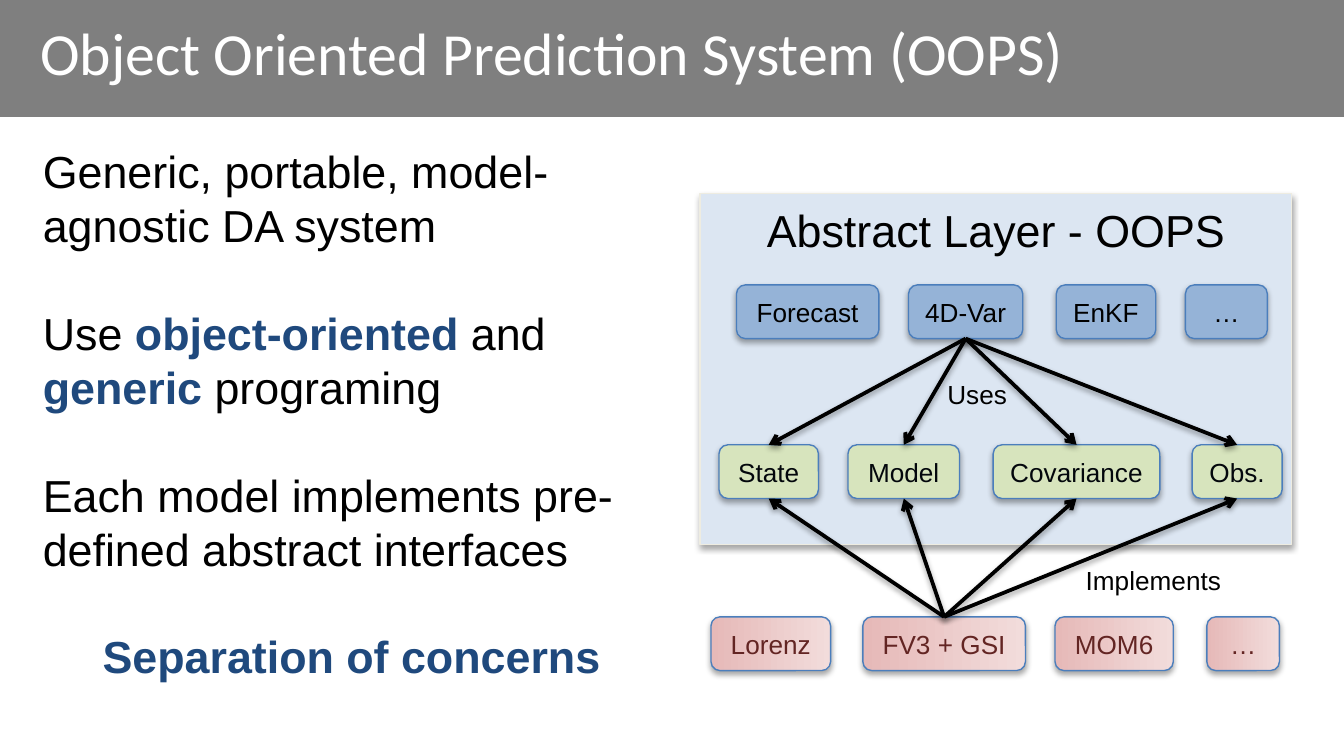
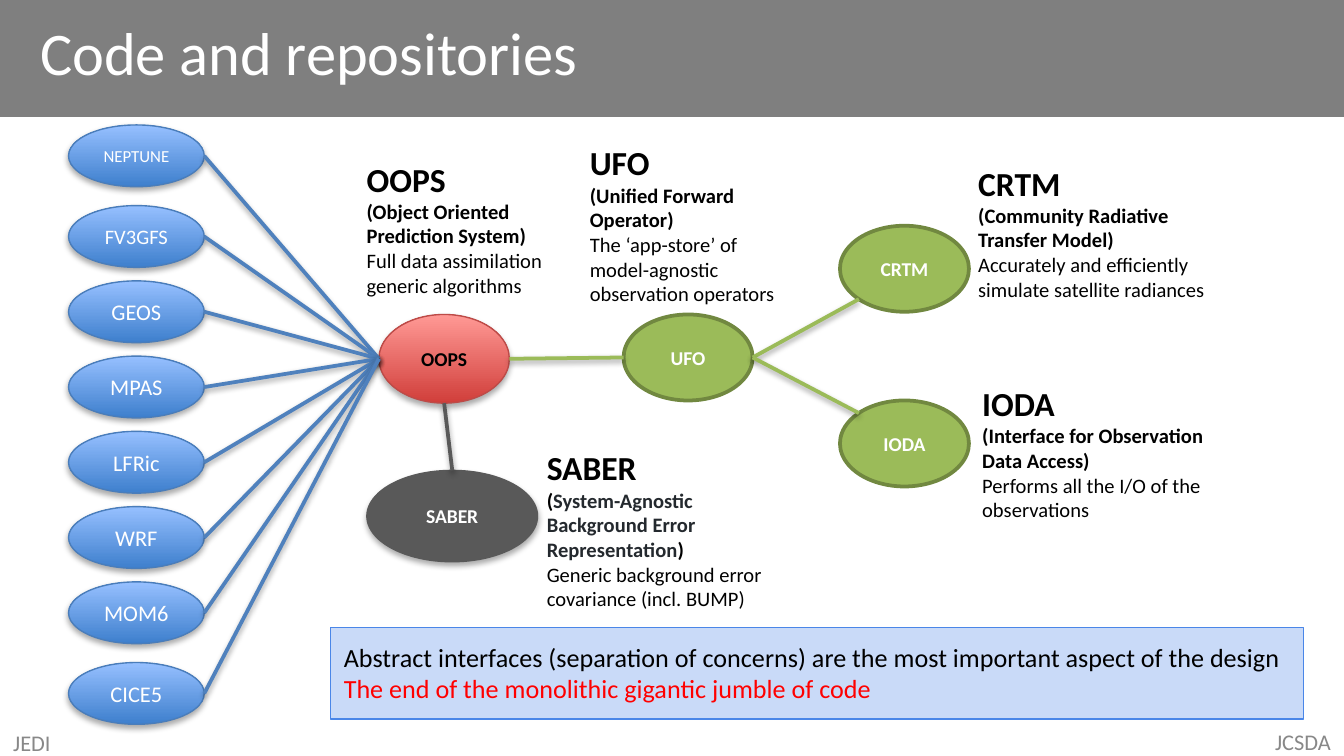
import copy
import math

import lxml.etree
import pptx
import pptx.dml.color
import pptx.enum.shapes
import pptx.enum.text
import pptx.oxml.ns
import pptx.util

COLUMNS, ROWS = 100, 56.25
COLOURS = {
    "black": "000000", "white": "FFFFFF", "ink": "03070C", "navy": "1F497D",
    "slate": "24292E", "red": "FF0000", "footer": "888888", "panel": "DCE6F2",
    "panel edge": "EEECE1", "pill edge": "4B7EBC", "application": "95B3D7",
    "interface": "D7E4BD", "rose": "E6B9B8", "pale rose": "F2DCDB",
    "maroon": "632523", "blue": "3E7FCD", "pale blue": "96C0FF",
    "blue edge": "4A7DBA", "blue line": "4F81BD", "core": "D13F3B",
    "pale core": "FF9995", "core edge": "BD4B48", "green": "9BBB59",
    "green edge": "718840", "grey": "595959", "banner": "C9DAF8",
    "banner edge": "4A86E8",
}
SHAPES = pptx.enum.shapes.MSO_SHAPE
ALIGN = pptx.enum.text.PP_ALIGN
ANCHOR = pptx.enum.text.MSO_ANCHOR
SITES = {270: 0, 180: 1, 90: 2, 0: 3}
qn = pptx.oxml.ns.qn


def rgb(name):
    return pptx.dml.color.RGBColor.from_string(COLOURS[name])


class Slides:
    """Holds the deck's style and the page being drawn."""

    def __init__(self):
        self.deck = pptx.Presentation()
        self.deck.slide_width = pptx.util.Inches(10)
        self.deck.slide_height = pptx.util.Inches(5.625)
        self.page = None
        self.font = "Calibri"

    def place(self, box):
        """Turn left, top, width, height in grid units into lengths."""
        units = (self.deck.slide_width / COLUMNS, self.deck.slide_height / ROWS) * 2
        return [round(length * unit) for length, unit in zip(box, units)]

    def start(self, title, box, size, font):
        self.page = self.deck.slides.add_slide(self.deck.slide_layouts[6])
        self.font = font
        band = self.shape(SHAPES.RECTANGLE, (0, 0, COLUMNS, 8.7), "black")
        colour = band._element.spPr.find(qn("a:solidFill"))[0]
        lxml.etree.SubElement(colour, qn("a:alpha"), val="50000")
        self.text(box, [[(title, {"size": size, "colour": "white", "name": "Calibri"})]],
                  anchor=ANCHOR.MIDDLE)

    def fill_frame(self, frame, paragraphs, align=ALIGN.LEFT, **layout):
        """Fill a frame; each paragraph is a list of (text, format) spans."""
        for index, spans in enumerate(paragraphs):
            para = frame.paragraphs[0] if index == 0 else frame.add_paragraph()
            para.alignment = align
            for name, value in layout.items():
                if index or name != "space_before":
                    setattr(para, name, value)
            for text, look in spans:
                self.span(para, text, look)

    def span(self, para, text, look):
        values = {"name": self.font, "bold": False, "colour": "black", **look}
        values["size"] = pptx.util.Pt(values["size"])
        colour = values.pop("colour")
        for index, piece in enumerate(text.split("\n")):
            if index:
                para.add_line_break()
                para._p[-1].append(copy.deepcopy(run._r.rPr))
            run = para.add_run()
            run.text = piece
            for name, value in values.items():
                setattr(run.font, name, value)
            run.font.color.rgb = rgb(colour)

    def text(self, box, paragraphs, anchor=ANCHOR.TOP, **layout):
        frame = self.page.shapes.add_textbox(*self.place(box)).text_frame
        frame.word_wrap = True
        frame.vertical_anchor = anchor
        self.fill_frame(frame, paragraphs, **layout)

    def shadow(self, effects, alpha, distance):
        cast = lxml.etree.SubElement(
            effects, qn("a:outerShdw"), blurRad="40000", dist=str(distance),
            dir="5400000", rotWithShape="0")
        colour = lxml.etree.SubElement(cast, qn("a:srgbClr"), val=COLOURS["black"])
        lxml.etree.SubElement(colour, qn("a:alpha"), val=str(alpha * 1000))

    def shape(self, kind, box, fill, edge=None, width=0.75, shadow=None, angle=0):
        """A fill is a colour, or a pair of colours for a gradient."""
        shape = self.page.shapes.add_shape(kind, *self.place(box))
        if isinstance(fill, tuple):
            shape.fill.gradient()
            shape.fill.gradient_angle = angle
            for stop, colour in zip(shape.fill.gradient_stops, fill):
                stop.color.rgb = rgb(colour)
        else:
            shape.fill.solid()
            shape.fill.fore_color.rgb = rgb(fill)
        if edge:
            shape.line.color.rgb = rgb(edge)
            shape.line.width = pptx.util.Pt(width)
        else:
            shape.line.fill.background()
        shape.shadow.inherit = False
        if shadow:
            self.shadow(shape._element.spPr.find(qn("a:effectLst")), shadow, 23000)
        return shape

    def node(self, kind, box, label, look, **style):
        """A shape with one centred label."""
        shape = self.shape(kind, box, **style)
        shape.text_frame.word_wrap = False
        shape.text_frame.vertical_anchor = ANCHOR.MIDDLE
        self.fill_frame(shape.text_frame, [[(label, look)]], align=ALIGN.CENTER)
        return shape

    def rim(self, shape, degrees):
        """Point on a shape's rim, clockwise from its right side."""
        turn = math.radians(degrees)
        return (round(shape.left + shape.width / 2 * (1 + math.cos(turn))),
                round(shape.top + shape.height / 2 * (1 + math.sin(turn))))

    def link(self, source, leave, target, arrive, colour, arrow=False, shadow=36):
        line = self.page.shapes.add_connector(
            pptx.enum.shapes.MSO_CONNECTOR.STRAIGHT,
            *self.rim(source, leave), *self.rim(target, arrive))
        if source.auto_shape_type != SHAPES.OVAL:
            line.begin_connect(source, SITES[leave])
            line.end_connect(target, SITES[arrive])
        line.line.color.rgb = rgb(colour)
        line.line.width = pptx.util.Pt(2)
        outline = line._element.spPr
        if arrow:
            lxml.etree.SubElement(outline.find(qn("a:ln")), qn("a:tailEnd"), type="arrow")
        self.shadow(lxml.etree.SubElement(outline, qn("a:effectLst")), shadow, 20000)


def draw_system(slides):
    slides.start("Object Oriented Prediction System (OOPS)", (2, 0, 91.5, 7.7), 32, "Arial")
    plain = {"size": 24}
    strong = {"size": 24, "bold": True, "colour": "navy"}
    pitch = pptx.util.Pt(28.9)
    slides.text((2.2, 10.2, 47.9, 32), [
        [("Generic, portable, model-agnostic DA system", plain)],
        [("Use ", plain), ("object-oriented", strong), (" and ", plain),
         ("generic ", strong), ("programing", plain)],
        [("Each model implements pre-defined abstract interfaces", plain)],
    ], line_spacing=pitch, space_before=pitch)
    slides.text((2.2, 46.3, 47.9, 5), [[("Separation of concerns", strong)]],
                align=ALIGN.CENTER, line_spacing=pitch)

    slides.shape(SHAPES.RECTANGLE, (52.1, 14.4, 44, 26.1), "panel", "panel edge", shadow=35)
    layers = [
        (21.2, "application", "black",
         [("Forecast", 54.8, 10.6), ("4D-Var", 67.6, 8.5), ("EnKF", 78.6, 7.4),
          ("…", 88.2, 6.1)]),
        (33.1, "interface", "ink",
         [("State", 53.5, 7.4), ("Model", 63.1, 8.3), ("Covariance", 73.9, 12.4),
          ("Obs.", 88.7, 6.7)]),
        (45.9, ("rose", "pale rose"), "maroon",
         [("Lorenz", 52.9, 8.9), ("FV3 + GSI", 64.2, 12.1), ("MOM6", 78.5, 8.8),
          ("…", 89.8, 5.4)]),
    ]
    applications, interfaces, models = [
        [slides.node(SHAPES.ROUNDED_RECTANGLE, (left, top, width, 4), label,
                     {"size": 14, "colour": ink}, fill=fill, edge="pill edge", shadow=35)
         for label, left, width in pills]
        for top, fill, ink, pills in layers]
    for source, leave, arrive in ((applications[1], 90, 270), (models[1], 270, 90)):
        for target in interfaces:
            slides.link(source, leave, target, arrive, "black", arrow=True, shadow=38)
    for label, box in (("Uses", (69.5, 27.7, 6.9, 4)), ("Implements", (79.8, 41.5, 14.3, 4))):
        slides.text(box, [[(label, {"size": 14})]])
    slides.text((51.9, 14.6, 44.4, 5), [[("Abstract Layer - OOPS", plain)]],
                align=ALIGN.CENTER, line_spacing=pitch)


def draw_repositories(slides):
    slides.start("Code and repositories", (2, 0.5, 92.4, 6.7), 32.4, "Calibri")
    for label, box, align in (("JEDI", (0, 54.2, 23.3, 2.1), ALIGN.LEFT),
                              ("JCSDA", (68.3, 54.2, 31.7, 2), ALIGN.RIGHT)):
        slides.text(box, [[(label, {"size": 12, "colour": "footer"})]],
                    anchor=ANCHOR.MIDDLE, align=align)

    def repository(label, box, ink="white", **style):
        look = {"size": 10.5, "bold": True, "colour": ink}
        return slides.node(SHAPES.OVAL, box, label, look, **style)

    oops = repository("OOPS", (28.2, 23.4, 9.7, 6.6), "black", fill=("core", "pale core"),
                      angle=90, edge="core edge", shadow=33)
    ufo, ioda, crtm = [
        repository(label, (left, top, 9.6, 6.4), fill="green", edge="green edge", width=2)
        for label, left, top in (("UFO", 46.4, 23.4), ("IODA", 62.5, 29.8),
                                 ("CRTM", 62.5, 16.8))]
    saber = repository("SABER", (27.3, 35, 12.7, 6.8), fill="grey", edge="grey", shadow=33)

    models = ["NEPTUNE", "FV3GFS", "GEOS", "MPAS", "LFRic", "WRF", "MOM6", "CICE5"]
    tops = [9.3] + [15.3 + 5.6 * step for step in range(6)] + [49.3]
    sizes = {"NEPTUNE": 9, "FV3GFS": 11}
    for label, top in zip(models, tops):
        model = slides.node(
            SHAPES.OVAL, (5.1, top, 10.1, 4.6), label,
            {"size": sizes.get(label, 12), "colour": "white"},
            fill=("blue", "pale blue"), angle=90, edge="blue edge", shadow=33)
        slides.link(model, 0, oops, 180, "blue line")
    slides.link(oops, 0, ufo, 180, "green")
    slides.link(ufo, 0, crtm, 135, "green")
    slides.link(ufo, 0, ioda, 225, "green")
    slides.link(oops, 90, saber, 270, "grey")

    captions = [
        ("UFO", "Unified Forward Operator",
         "The ‘app-store’ of model-agnostic \nobservation operators",
         (42.9, 10.1, 15.8, 12.6), "black"),
        ("IODA", "Interface for Observation Data Access",
         "Performs all the I/O of the observations", (72.1, 28, 21, 10.8), "black"),
        ("OOPS", "Object Oriented Prediction System",
         "Full data assimilation generic algorithms", (26.3, 11.3, 16.3, 12.5), "black"),
        ("CRTM", "Community Radiative Transfer Model",
         "Accurately and efficiently simulate satellite radiances",
         (71.8, 11.6, 19.7, 10.8), "black"),
        ("SABER", "System-Agnostic Background Error Representation",
         "Generic background error covariance (incl. BUMP)",
         (39.7, 32.8, 19.7, 13.4), "slate"),
    ]
    bold = {"size": 11, "bold": True}
    for short, name, purpose, box, ink in captions:
        slides.text(box, [
            [(short + "\n", {"size": 18, "bold": True}), ("(", bold),
             (name, {**bold, "colour": ink}), (")", bold)],
            [(purpose, {"size": 11})]])

    banner = slides.shape(SHAPES.RECTANGLE, (24.6, 46.7, 72.4, 6.8), "banner", "banner edge")
    frame = banner.text_frame
    for name, value in {"margin_top": pptx.util.Inches(0.1),
                        "margin_bottom": pptx.util.Inches(0.1),
                        "word_wrap": True, "vertical_anchor": ANCHOR.TOP}.items():
        setattr(frame, name, value)
    slides.fill_frame(frame, [
        [("Abstract interfaces (separation of concerns) are the most important aspect"
          " of the design", {"size": 14})],
        [("The end of the monolithic gigantic jumble of code", {"size": 14, "colour": "red"})]])


def main():
    slides = Slides()
    draw_system(slides)
    draw_repositories(slides)
    slides.deck.save("out.pptx")


if __name__ == "__main__":
    main()
